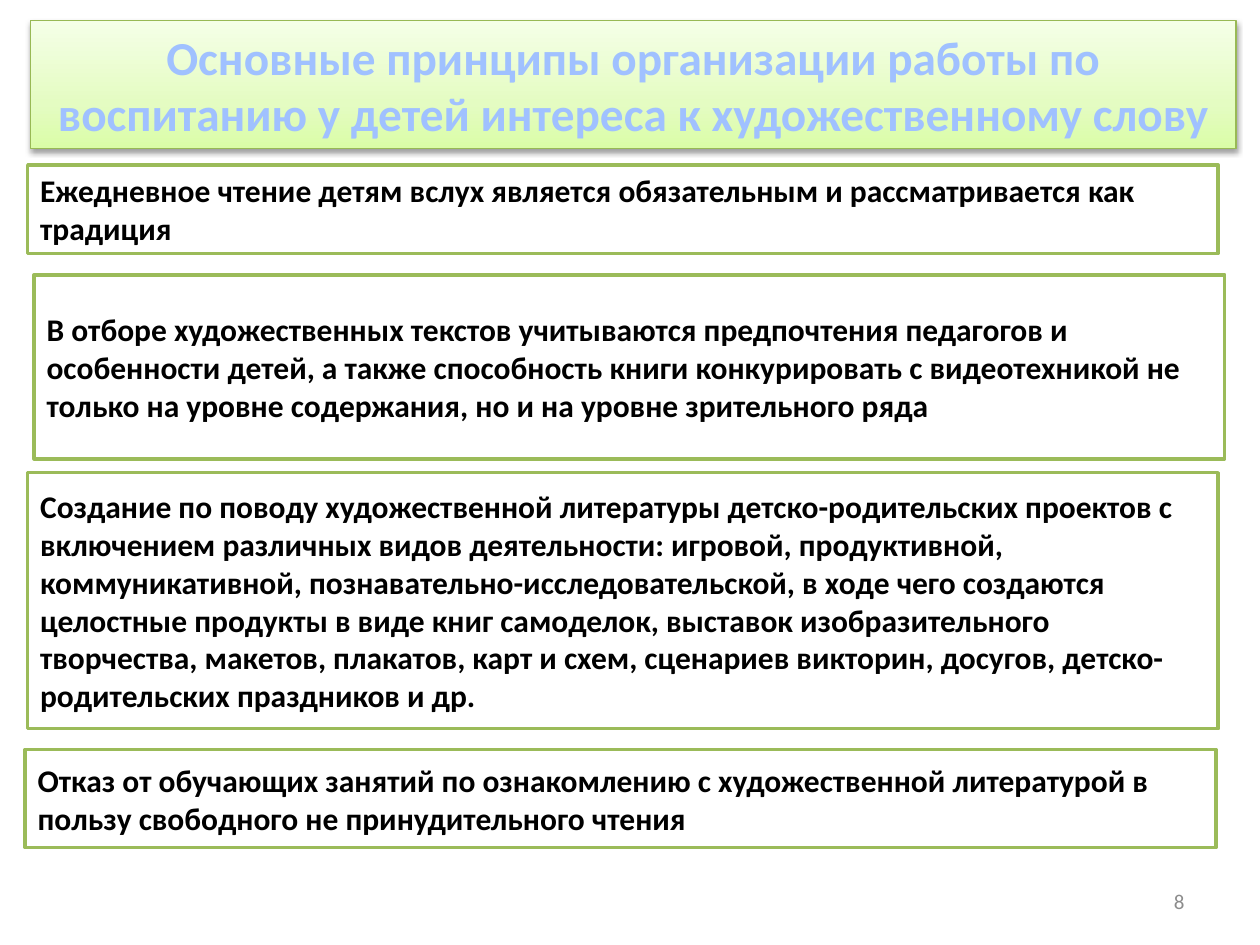
"""Build a slide listing the principles of raising children's interest in literature."""
from dataclasses import dataclass

from lxml import etree
from pptx import Presentation
from pptx.dml.color import RGBColor
from pptx.enum import shapes, text
from pptx.oxml import parse_xml
from pptx.oxml.ns import nsdecls
from pptx.util import Cm, Pt


@dataclass(frozen=True)
class Theme:
    """Colours, font and type sizes of the slide."""

    font: str = "Calibri"
    title_size: float = 27
    body_size: float = 18
    number_size: float = 12
    title_colour: str = "A0C1FF"
    body_colour: str = "000000"
    number_colour: str = "8C8C8C"
    box_fill: str = "FFFFFF"
    box_line: str = "9BBB59"
    title_line: str = "98B955"
    title_stops: tuple = ((0, "DAFDA7"), (35, "E4FCC2"), (100, "F5FFE7"))


@dataclass(frozen=True)
class Principle:
    """A framed statement with its position and height in centimetres."""

    left: float
    top: float
    height: float
    wording: str


THEME = Theme()
BOX_WIDTH = 24
TITLE = "Основные принципы организации работы по воспитанию у детей интереса к художественному слову"
PRINCIPLES = (
    Principle(0.56, 3.33, 1.78,
              "Ежедневное чтение детям вслух является обязательным и рассматривается как традиция"),
    Principle(0.69, 5.54, 3.71,
              "В отборе художественных текстов учитываются предпочтения педагогов и особенности детей, "
              "а также способность книги конкурировать с видеотехникой не только на уровне содержания, "
              "но и на уровне зрительного ряда"),
    Principle(0.56, 9.53, 5.16,
              "Создание по поводу художественной литературы детско-родительских проектов с включением "
              "различных видов деятельности: игровой, продуктивной, коммуникативной, "
              "познавательно-исследовательской, в ходе чего создаются целостные продукты в виде книг "
              "самоделок, выставок изобразительного творчества, макетов, плакатов, карт и схем, "
              "сценариев викторин, досугов, детско-родительских праздников и др."),
    Principle(0.51, 15.11, 1.98,
              "Отказ от обучающих занятий по ознакомлению с художественной литературой в пользу "
              "свободного не принудительного чтения"),
)


def write(shape, wording: str, size: float, colour: str, alignment, bold: bool = True) -> None:
    """Put one uniformly formatted paragraph in a shape."""
    frame = shape.text_frame
    frame.text = wording
    frame.word_wrap = True
    frame.auto_size = text.MSO_AUTO_SIZE.NONE
    frame.vertical_anchor = text.MSO_ANCHOR.MIDDLE
    paragraph = frame.paragraphs[0]
    paragraph.alignment = alignment
    font = paragraph.font
    font.name, font.size, font.bold = THEME.font, Pt(size), bold
    font.color.rgb = RGBColor.from_string(colour)


def outline(shape, colour: str, width: float) -> None:
    """Give a shape a solid outline."""
    shape.line.color.rgb = RGBColor.from_string(colour)
    shape.line.width = Pt(width)


def append_property(shape, markup: str) -> None:
    """Append a drawing element to the shape properties."""
    element: etree.ElementBase = parse_xml(markup.replace(">", f" {nsdecls('a')}>", 1))
    shape.element.spPr.append(element)


def draw_title(slide) -> None:
    """Format the title as a shaded rounded panel."""
    title = slide.shapes.title
    title.left, title.top, title.width, title.height = Cm(0.61), Cm(0.41), Cm(24.31), Cm(2.59)
    stops = "".join(
        f'<a:gs pos="{position * 1000}"><a:srgbClr val="{colour}"/></a:gs>'
        for position, colour in THEME.title_stops
    )
    append_property(title, '<a:prstGeom prst="roundRect"><a:avLst/></a:prstGeom>')
    append_property(title, f'<a:gradFill rotWithShape="1"><a:gsLst>{stops}</a:gsLst>'
                           '<a:lin ang="16200000" scaled="0"/></a:gradFill>')
    outline(title, THEME.title_line, 0.75)
    append_property(title, f'<a:effectLst><a:outerShdw blurRad="{Pt(3.1)}" dist="{Pt(1.6)}" '
                           'dir="5400000" rotWithShape="0"><a:srgbClr val="000000">'
                           '<a:alpha val="38000"/></a:srgbClr></a:outerShdw></a:effectLst>')
    write(title, TITLE, THEME.title_size, THEME.title_colour, text.PP_ALIGN.CENTER)


def draw_principle(slide, principle: Principle) -> None:
    """Draw one framed statement."""
    box = slide.shapes.add_shape(
        shapes.MSO_SHAPE.RECTANGLE, Cm(principle.left), Cm(principle.top),
        Cm(BOX_WIDTH), Cm(principle.height),
    )
    box.shadow.inherit = False
    box.fill.solid()
    box.fill.fore_color.rgb = RGBColor.from_string(THEME.box_fill)
    outline(box, THEME.box_line, 2)
    write(box, principle.wording, THEME.body_size, THEME.body_colour, text.PP_ALIGN.LEFT)


def draw_number(slide, number: str) -> None:
    """Draw the slide number at the lower right."""
    box = slide.shapes.add_textbox(Cm(18.21), Cm(17.65), Cm(5.92), Cm(1.02))
    write(box, number, THEME.number_size, THEME.number_colour, text.PP_ALIGN.RIGHT, bold=False)


def main() -> None:
    """Build and save the presentation."""
    presentation = Presentation()
    presentation.slide_width, presentation.slide_height = Cm(25.4), Cm(19.05)
    slide = presentation.slides.add_slide(presentation.slide_layouts.get_by_name("Title Only"))
    draw_title(slide)
    for principle in PRINCIPLES:
        draw_principle(slide, principle)
    draw_number(slide, "8")
    presentation.save("out.pptx")


if __name__ == "__main__":
    main()
